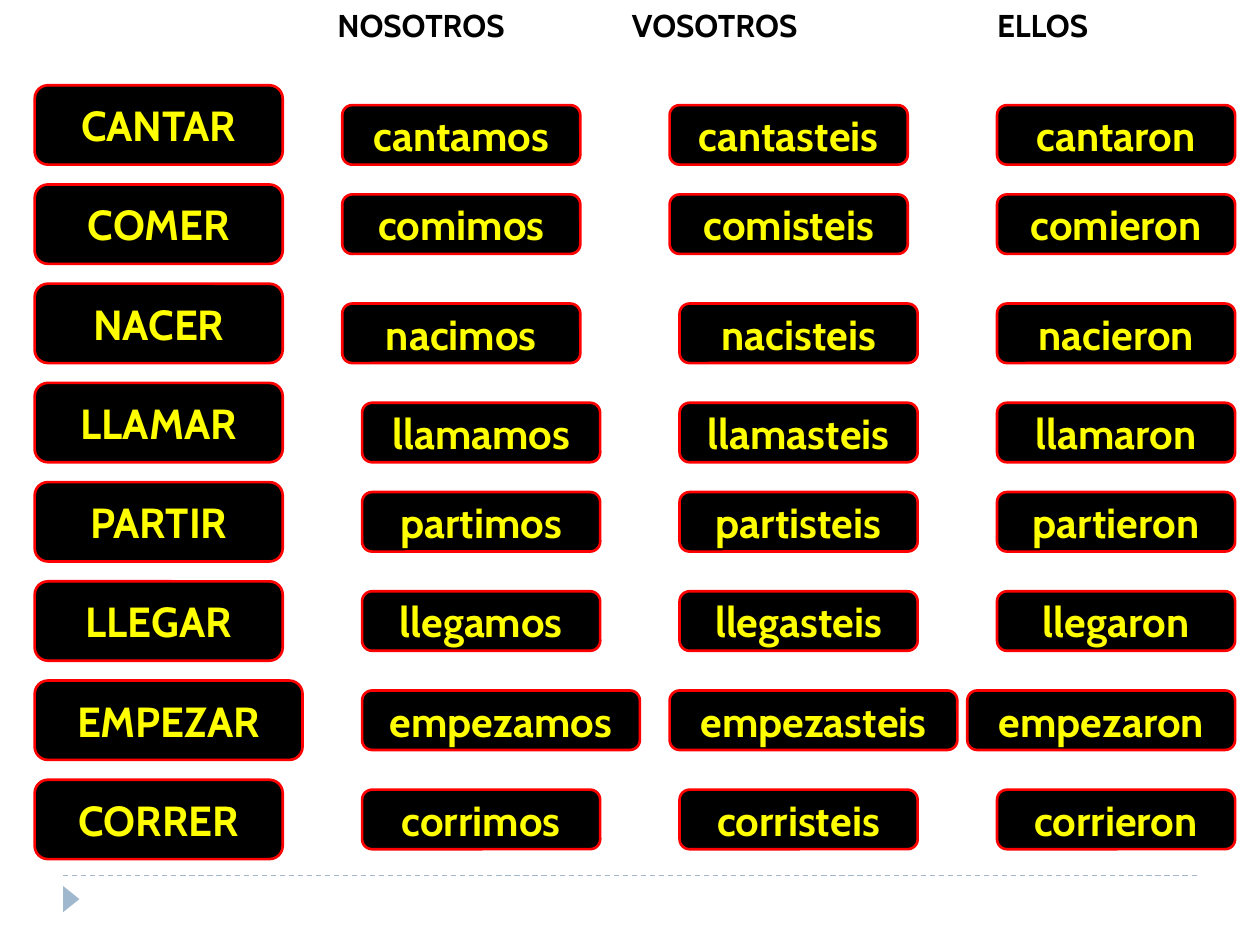
import pptx
import pptx.util
import pptx.dml.color
import pptx.enum.dml
import pptx.enum.shapes
import pptx.enum.text
import pptx.oxml.ns
import lxml.etree

Cm = pptx.util.Cm
Pt = pptx.util.Pt
SHAPES = pptx.enum.shapes.MSO_SHAPE


def color(hex_value):
    return pptx.dml.color.RGBColor.from_string(hex_value)


def add_verb_block(word, left, top, width, height):
    block = slide.shapes.add_shape(
        SHAPES.ROUNDED_RECTANGLE, Cm(left), Cm(top), Cm(width), Cm(height))
    block.shadow.inherit = False
    block.fill.solid()
    block.fill.fore_color.rgb = color("000000")
    block.line.color.rgb = color("FF0000")
    block.line.width = Pt(1.5)
    block.text_frame.vertical_anchor = pptx.enum.text.MSO_ANCHOR.MIDDLE
    line = block.text_frame.paragraphs[0]
    line.alignment = pptx.enum.text.PP_ALIGN.CENTER
    run = line.add_run()
    run.text = word
    run.font.color.rgb = color("FFFF00")
    for name, value in verb_format.items():
        setattr(run.font, name, value)


verb_format = {"name": "Cabin", "size": Pt(24), "bold": True}
pronoun_format = {"name": "Cabin", "size": Pt(18), "bold": True}

deck = pptx.Presentation()
deck.slide_width = Cm(25.4)
deck.slide_height = Cm(19.05)
slide = deck.slides.add_slide(deck.slide_layouts[6])

footer_rule = slide.shapes.add_connector(
    pptx.enum.shapes.MSO_CONNECTOR.STRAIGHT, Cm(1.27), Cm(17.65), Cm(24.13), Cm(17.65))
footer_rule.line.color.rgb = color("9FB8CD")
footer_rule.line.width = Pt(0.75)
footer_rule.line.dash_style = pptx.enum.dml.MSO_LINE.DASH
lxml.etree.SubElement(footer_rule._element.spPr, pptx.oxml.ns.qn("a:effectLst"))

footer_arrow = slide.shapes.add_shape(
    SHAPES.ISOSCELES_TRIANGLE, Cm(1.17), Cm(17.96), Cm(0.53), Cm(0.33))
footer_arrow.rotation = 90
footer_arrow.shadow.inherit = False
footer_arrow.fill.solid()
footer_arrow.fill.fore_color.rgb = color("9FB8CD")
footer_arrow.line.fill.background()

pronouns = slide.shapes.add_textbox(Cm(6.55), Cm(0), Cm(18.85), Cm(1.02))
pronouns.text_frame.word_wrap = True
pronoun_line = pronouns.text_frame.paragraphs[0]
pronoun_run = pronoun_line.add_run()
pronoun_run.text = "NOSOTROS\tVOSOTROS\tELLOS"
pronoun_run.font.color.rgb = color("000000")
for name, value in pronoun_format.items():
    setattr(pronoun_run.font, name, value)
tab_stops = lxml.etree.SubElement(
    pronoun_line._p.get_or_add_pPr(), pptx.oxml.ns.qn("a:tabLst"))
for position in (5.94, 13.3):
    lxml.etree.SubElement(
        tab_stops, pptx.oxml.ns.qn("a:tab"), pos=str(Cm(position)), algn="l")

FIRST_TOP, ROW_STEP = 1.72, 2
VERB_LEFT, VERB_WIDTH, VERB_HEIGHT = 0.7, 5, 1.6
FORM_WIDTH, FORM_HEIGHT = 4.8, 1.2
regular_widths = (VERB_WIDTH, FORM_WIDTH, FORM_WIDTH, FORM_WIDTH)
empezar_widths = (5.4, 5.6, 5.8, 5.4)

conjugations = [
    ("CANTAR", ("cantamos", "cantasteis", "cantaron"), (6.9, 13.5, 20.1), 0.4),
    ("COMER", ("comimos", "comisteis", "comieron"), (6.9, 13.5, 20.1), 0.2),
    ("NACER", ("nacimos", "nacisteis", "nacieron"), (6.9, 13.7, 20.1), 0.4),
    ("LLAMAR", ("llamamos", "llamasteis", "llamaron"), (7.3, 13.7, 20.1), 0.4),
    ("PARTIR", ("partimos", "partisteis", "partieron"), (7.3, 13.7, 20.1), 0.2),
    ("LLEGAR", ("llegamos", "llegasteis", "llegaron"), (7.3, 13.7, 20.1), 0.2),
    ("EMPEZAR", ("empezamos", "empezasteis", "empezaron"), (7.3, 13.5, 19.5), 0.2),
    ("CORRER", ("corrimos", "corristeis", "corrieron"), (7.3, 13.7, 20.1), 0.2),
]

for row, (verb, forms, form_lefts, form_drop) in enumerate(conjugations):
    top = FIRST_TOP + row * ROW_STEP
    verb_width, *form_widths = empezar_widths if verb == "EMPEZAR" else regular_widths
    add_verb_block(verb, VERB_LEFT, top, verb_width, VERB_HEIGHT)
    for form, left, width in zip(forms, form_lefts, form_widths):
        add_verb_block(form, left, top + form_drop, width, FORM_HEIGHT)

deck.save("out.pptx")
